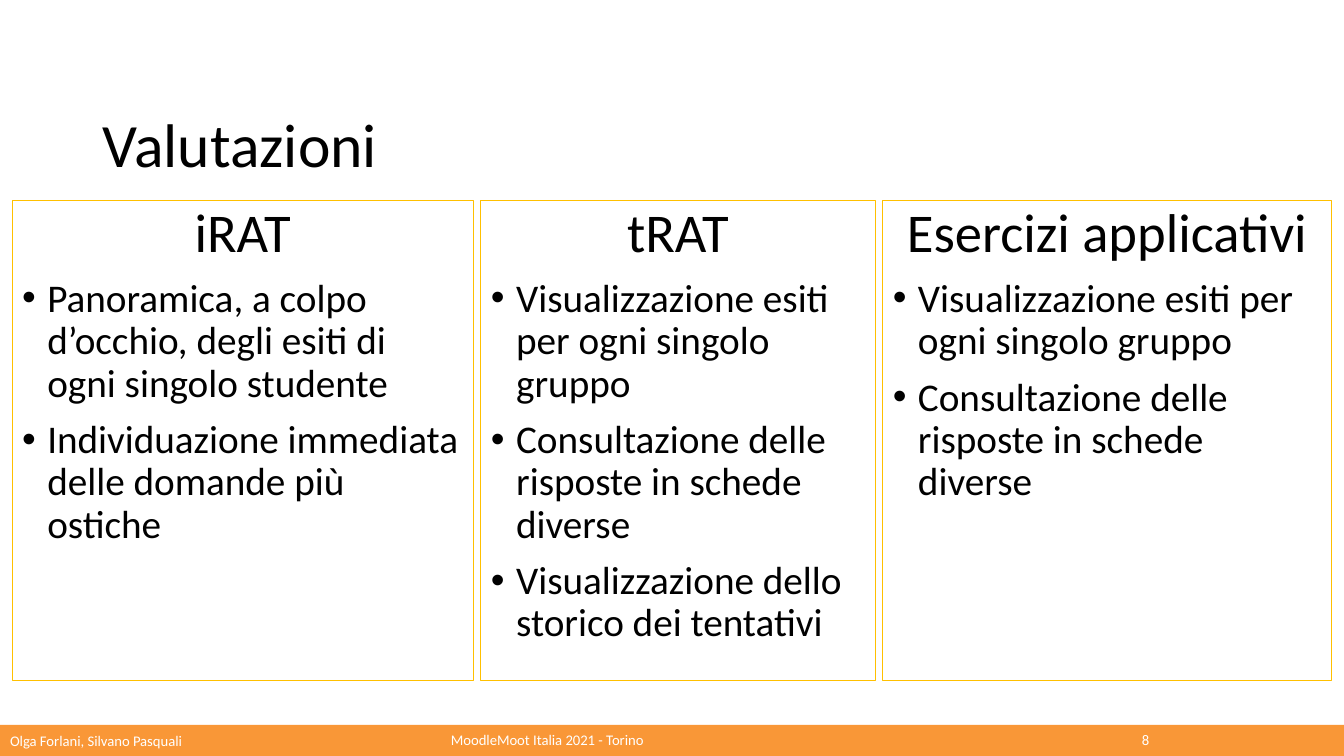
from dataclasses import dataclass

from lxml import etree
from pptx import Presentation
from pptx.dml.color import RGBColor
from pptx.enum.shapes import MSO_SHAPE
from pptx.enum.text import MSO_ANCHOR, MSO_AUTO_SIZE, PP_ALIGN
from pptx.oxml.ns import qn
from pptx.shapes.base import BaseShape
from pptx.slide import Slide
from pptx.text.text import _Paragraph as Para
from pptx.util import Pt

RECT = MSO_SHAPE.RECTANGLE
TOP, MIDDLE = MSO_ANCHOR.TOP, MSO_ANCHOR.MIDDLE
LEFT, CENTER = PP_ALIGN.LEFT, PP_ALIGN.CENTER
NO_FIT = MSO_AUTO_SIZE.NONE


@dataclass(frozen=True)
class Theme:
    face: str = "Calibri"
    ink: RGBColor = RGBColor(0, 0, 0)
    pale: RGBColor = RGBColor(255, 255, 255)
    gold: RGBColor = RGBColor(0xFF, 0xC0, 0x00)
    orange: RGBColor = RGBColor(0xF9, 0x97, 0x37)
    title: float = 44
    head: float = 39
    body: float = 28
    foot: float = 10.5


@dataclass(frozen=True)
class Column:
    width: float
    head: str
    items: tuple[str, ...]


THEME = Theme()
WIDTH, HEIGHT = 960, 540
EDGE, GAP = 8.6, 5.4
GROUP = "Visualizzazione esiti per ogni singolo gruppo"
CARDS = "Consultazione delle risposte in schede diverse"
COLUMNS = (
    Column(329.5, "iRAT", (
        "Panoramica, a colpo d’occhio, degli esiti di ogni singolo studente",
        "Individuazione immediata delle domande più ostiche",
    )),
    Column(281.6, "tRAT", (GROUP, CARDS, "Visualizzazione dello storico dei tentativi")),
    Column(320.4, "Esercizi applicativi", (GROUP, CARDS)),
)


def place(shape: BaseShape, left: float, top: float, width: float, height: float) -> None:
    shape.left, shape.top = Pt(left), Pt(top)
    shape.width, shape.height = Pt(width), Pt(height)


def setup(shape: BaseShape, anchor: MSO_ANCHOR) -> None:
    frame = shape.text_frame
    frame.word_wrap = True
    frame.auto_size = NO_FIT
    frame.vertical_anchor = anchor


def style(para: Para, size: float, color: RGBColor, align: PP_ALIGN = LEFT) -> None:
    para.alignment = align
    para.line_spacing = 0.9
    para.font.name = THEME.face
    para.font.size = Pt(size)
    para.font.bold = False
    para.font.color.rgb = color


def indent(para: Para, bullet: bool) -> None:
    props = para._p.get_or_add_pPr()
    depth = Pt(18) if bullet else 0
    props.set("marL", str(depth))
    props.set("indent", str(-depth))
    if bullet:
        etree.SubElement(props, qn("a:buFont"), typeface="Arial")
        etree.SubElement(props, qn("a:buChar"), char="•")
    else:
        etree.SubElement(props, qn("a:buNone"))


def draw_column(shape: BaseShape, column: Column, left: float) -> None:
    place(shape, left, 143.3, column.width, 342.7)
    setup(shape, TOP)
    shape.line.color.rgb = THEME.gold
    shape.line.width = Pt(0.75)
    frame = shape.text_frame
    head = frame.paragraphs[0]
    head.text = column.head
    indent(head, False)
    style(head, THEME.head, THEME.ink, CENTER)
    head.space_before = Pt(0)
    for item in column.items:
        para = frame.add_paragraph()
        para.text = item
        indent(para, True)
        style(para, THEME.body, THEME.ink)
        para.space_before = Pt(10)


def draw_bar(slide: Slide) -> None:
    bar = slide.shapes.add_shape(RECT, 0, Pt(517.7), Pt(WIDTH), Pt(HEIGHT - 517.7))
    bar.shadow.inherit = False
    bar.fill.solid()
    bar.fill.fore_color.rgb = THEME.orange
    bar.line.fill.background()
    setup(bar, MIDDLE)
    para = bar.text_frame.paragraphs[0]
    para.text = "\tMoodleMoot Italia 2021 - Torino\t8"
    tabs = etree.SubElement(para._p.get_or_add_pPr(), qn("a:tabLst"))
    for stop in (315, 808.5):
        etree.SubElement(tabs, qn("a:tab"), pos=str(Pt(stop)), algn="l")
    style(para, THEME.foot, THEME.pale)
    tree = bar.element.getparent()
    tree.insert(2, bar.element)


def draw_line(shape: BaseShape, text: str, size: float, color: RGBColor, anchor: MSO_ANCHOR) -> None:
    setup(shape, anchor)
    para = shape.text_frame.paragraphs[0]
    para.text = text
    indent(para, False)
    style(para, size, color)
    para.space_before = Pt(0)


def main() -> None:
    deck = Presentation()
    deck.slide_width, deck.slide_height = Pt(WIDTH), Pt(HEIGHT)
    slide = deck.slides.add_slide(deck.slide_layouts.get_by_name("Comparison"))
    title, *bodies, author = slide.placeholders

    draw_bar(slide)
    place(title, 66.2, 53.3, 828, 104.4)
    draw_line(title, "Valutazioni", THEME.title, THEME.ink, MIDDLE)

    left = EDGE
    for shape, column in zip(bodies, COLUMNS):
        draw_column(shape, column, left)
        left += column.width + GAP

    place(author, 0, 520.6, 293.8, 20.9)
    draw_line(author, "Olga Forlani, Silvano Pasquali", THEME.foot, THEME.pale, TOP)
    deck.save("out.pptx")


if __name__ == "__main__":
    main()
